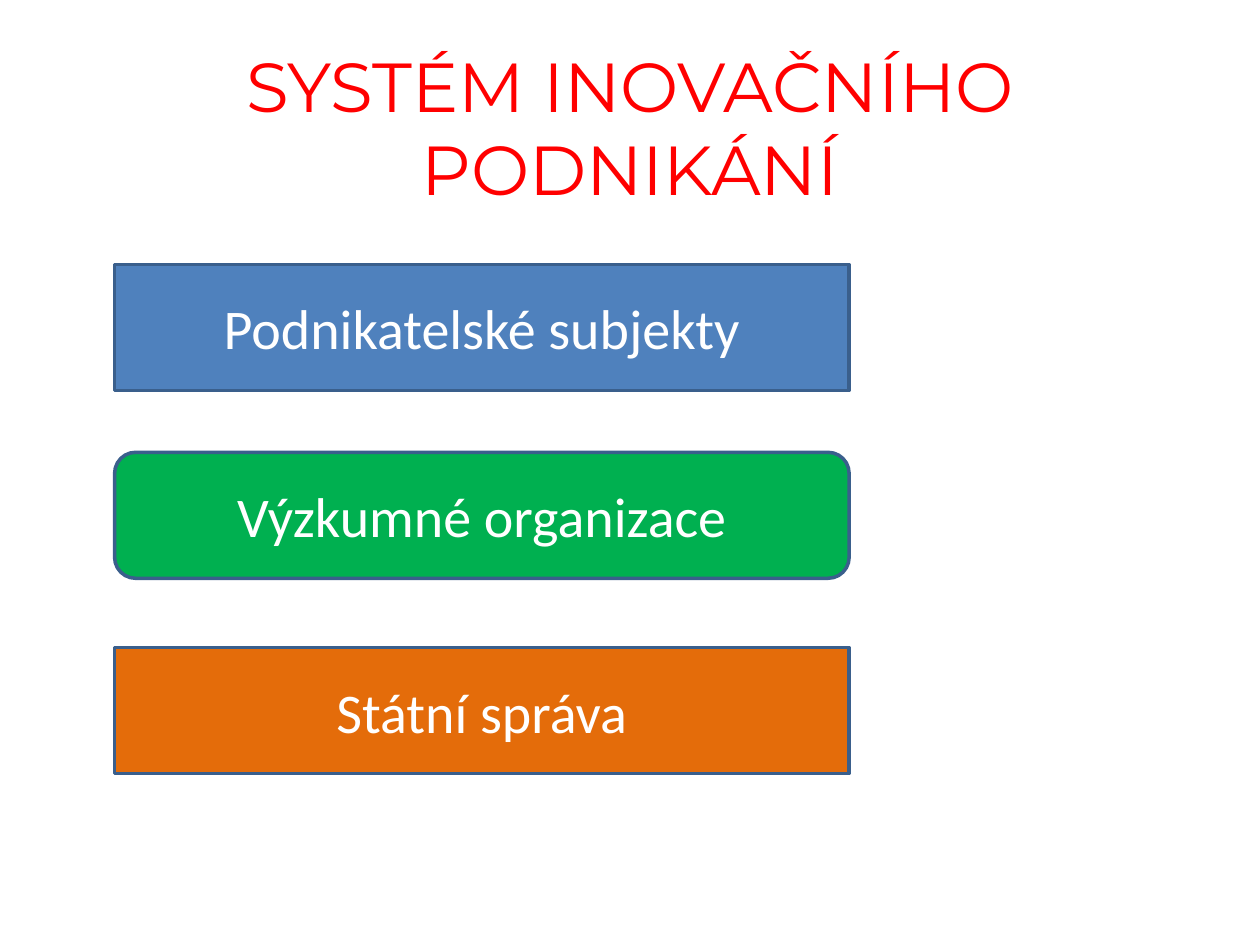
from dataclasses import dataclass

from pptx import Presentation
from pptx.dml.color import RGBColor as Rgb
from pptx.enum.shapes import MSO_SHAPE as Shape
from pptx.enum.text import MSO_ANCHOR as Anchor, PP_ALIGN as Align
from pptx.util import Inches, Pt


@dataclass(frozen=True)
class Theme:
    """Colours, fonts and sizes of the slide."""
    title_font: str = "Montserrat"
    body_font: str = "Calibri"
    title_size: float = 39.6
    body_size: float = 32
    outline_width: float = 2
    title: str = "FF0000"
    light: str = "FFFFFF"
    outline: str = "3A5F8C"
    business: str = "4F81BD"
    research: str = "00B050"
    government: str = "E46C0A"


THEME = Theme()
ROWS = 4.04
SECTORS = [
    ("Podnikatelské subjekty", Shape.RECTANGLE, THEME.business, 0),
    ("Výzkumné organizace", Shape.ROUNDED_RECTANGLE, THEME.research, 1.49),
    ("Státní správa", Shape.RECTANGLE, THEME.government, 3.04),
]


def write(frame, wording, font, size, color):
    """Fill a text frame with one centred paragraph."""
    frame.word_wrap = True
    paragraph = frame.paragraphs[0]
    paragraph.text = wording
    paragraph.alignment = Align.CENTER
    paragraph.font.name = font
    paragraph.font.size = Pt(size)
    paragraph.font.color.rgb = Rgb.from_string(color)


def add_heading(slide, left, top, width, height):
    """Place the heading in the given box."""
    frame = slide.shapes.add_textbox(left, top, width, height).text_frame
    frame.vertical_anchor = Anchor.TOP
    frame.margin_top = Inches(0.04)
    write(frame, "SYSTÉM INOVAČNÍHO PODNIKÁNÍ", THEME.title_font,
          THEME.title_size, THEME.title)


def add_sectors(slide, left, top, width, height):
    """Stack the sectors, each one row high, in the given box."""
    row = height / ROWS
    for wording, outline, fill, offset in SECTORS:
        sector = slide.shapes.add_shape(
            outline, left, round(top + offset * row), width, round(row))
        sector.shadow.inherit = False
        sector.fill.solid()
        sector.fill.fore_color.rgb = Rgb.from_string(fill)
        sector.line.color.rgb = Rgb.from_string(THEME.outline)
        sector.line.width = Pt(THEME.outline_width)
        sector.text_frame.vertical_anchor = Anchor.MIDDLE
        write(sector.text_frame, wording, THEME.body_font,
              THEME.body_size, THEME.light)


def main():
    """Build and save the slide."""
    deck = Presentation()
    deck.slide_width, deck.slide_height = Inches(10), Inches(7.5)
    slide = deck.slides.add_slide(deck.slide_layouts[6])
    add_heading(slide, *map(Inches, (0.5, 0.3, 9, 1.25)))
    add_sectors(slide, *map(Inches, (0.91, 2.1, 5.83, ROWS)))
    deck.save("out.pptx")


if __name__ == "__main__":
    main()
